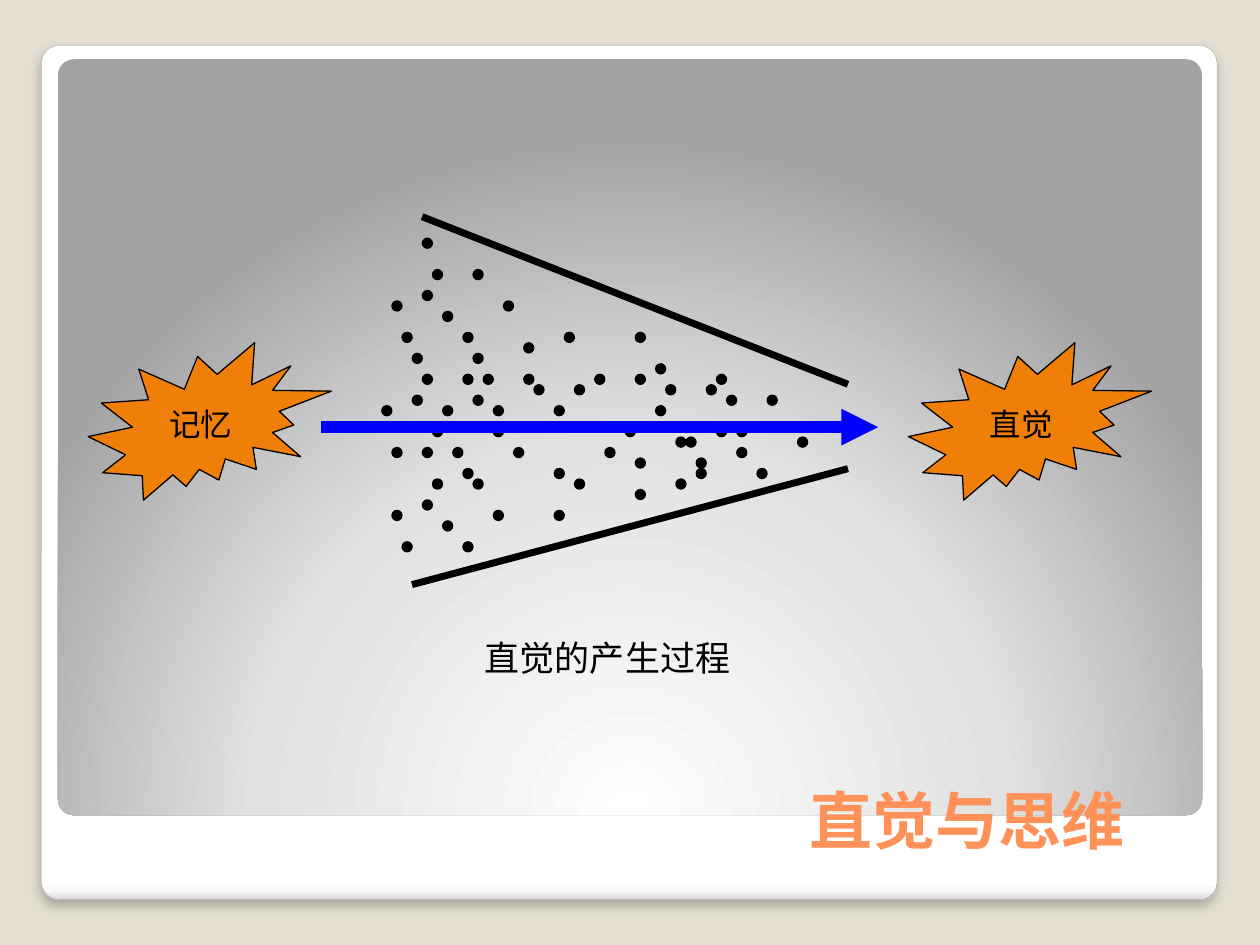
from dataclasses import dataclass

from pptx import Presentation
from pptx.dml.color import RGBColor
from pptx.enum.shapes import MSO_CONNECTOR as Link, MSO_SHAPE as Kind
from pptx.enum.text import MSO_ANCHOR as Anchor, PP_ALIGN as Align
from pptx.oxml import parse_xml
from pptx.oxml.ns import nsdecls, qn
from pptx.util import Inches, Pt

Box = tuple[float, float, float, float]
Stops = list[tuple[int, str]]

BLACK = "000000"
DOT, LEFT, TOP = 0.08, 3.03, 1.89
STEP_X, STEP_Y = 3.3 / 41, 2.41 / 29
# grid row -> grid columns that hold a dot
DOTS = {
    0: [4], 3: [5, 9], 5: [4], 6: [1, 12], 7: [6],
    9: [2, 8, 18, 25], 10: [14], 11: [3, 9], 12: [27],
    13: [4, 8, 10, 14, 21, 25, 33], 14: [15, 19, 28, 32],
    15: [3, 9, 34, 38], 16: [0, 6, 11, 17, 27],
    18: [5, 11, 24, 33, 35], 19: [29, 30, 41],
    20: [1, 4, 7, 13, 22, 35], 21: [25, 31], 22: [8, 17, 31, 37],
    23: [5, 9, 19, 29], 24: [25], 25: [4], 26: [1, 11, 17],
    27: [6], 29: [2, 8],
}


@dataclass
class Line:
    ends: Box
    color: str
    width: float
    arrow: bool = False


@dataclass
class Label:
    text: str
    size: int
    color: str = BLACK
    font: str = "Arial"
    bold: bool = False
    align: Align = Align.LEFT


WALLS = [
    Line((3.35, 1.72, 6.73, 3.05), BLACK, 4),
    Line((3.27, 4.64, 6.73, 3.72), BLACK, 4),
]
ARROW = Line((2.55, 3.39, 6.97, 3.39), "0000FF", 7, arrow=True)
BURSTS = {"记忆": 0.7, "直觉": 7.21}


def rgb(code: str) -> RGBColor:
    return RGBColor.from_string(code)


def place(box: Box) -> list[Inches]:
    return [Inches(v) for v in box]


def assign(item, values: dict) -> None:
    for name, value in values.items():
        setattr(item, name, value)


def add_form(shapes, kind: Kind, box: Box, fill: str,
             edge: str = BLACK, width: float = 0.75):
    form = shapes.add_shape(kind, *place(box))
    form.shadow.inherit = False
    form.fill.solid()
    form.fill.fore_color.rgb = rgb(fill)
    form.line.color.rgb = rgb(edge)
    form.line.width = Pt(width)
    return form


def add_line(shapes, line: Line) -> None:
    link = shapes.add_connector(Link.STRAIGHT, *place(line.ends))
    link.line.color.rgb = rgb(line.color)
    link.line.width = Pt(line.width)
    if line.arrow:
        link.line._get_or_add_ln().append(
            parse_xml(f'<a:tailEnd {nsdecls("a")} type="triangle"/>'))
    link._element.spPr.append(parse_xml(f'<a:effectLst {nsdecls("a")}/>'))


def write(form, label: Label, **frame) -> None:
    assign(form.text_frame, frame)
    para = form.text_frame.paragraphs[0]
    para.alignment = label.align
    run = para.add_run()
    run.text = label.text
    assign(run.font, {"size": Pt(label.size), "name": label.font,
                      "bold": label.bold})
    run.font.color.rgb = rgb(label.color)


def shade(form, stops: Stops, course: str) -> None:
    """Swap the plain fill for a gradient; course is its direction in XML."""
    marks = "".join(
        f'<a:gs pos="{at * 1000}"><a:srgbClr val="{code}"/></a:gs>'
        for at, code in stops)
    props = form._element.spPr
    props.replace(props.find(qn("a:solidFill")), parse_xml(
        f'<a:gradFill {nsdecls("a")} rotWithShape="1">'
        f"<a:gsLst>{marks}</a:gsLst>{course}</a:gradFill>"))


def add_frame(shapes) -> None:
    """Draw the white card with its shadow and the grey panel on it."""
    card = add_form(shapes, Kind.ROUNDED_RECTANGLE,
                    (0.33, 0.36, 9.33, 6.78), "FFFFFF", "A4A4A4", 0.16)
    shade(card, [(0, "FFFFFF"), (98, "FFFFFF"), (99, "F7F7F7"),
                 (100, "DADADA")], '<a:lin ang="5400000" scaled="0"/>')
    card._element.spPr.find(qn("a:effectLst")).append(parse_xml(
        f'<a:outerShdw {nsdecls("a")} blurRad="{Pt(6)}" dist="{Pt(4)}" '
        'dir="5400000" algn="t" rotWithShape="0"><a:srgbClr val="000000">'
        '<a:alpha val="25000"/></a:srgbClr></a:outerShdw>'))
    panel = add_form(shapes, Kind.ROUNDED_RECTANGLE,
                     (0.46, 0.47, 9.08, 6), "E1E1E1")
    panel.line.fill.background()
    shade(panel, [(0, "FFFFFF"), (55, "E1E1E1"), (100, "A2A2A2")],
          '<a:path path="circle"><a:fillToRect l="50000" t="175000" '
          'r="50000" b="-75000"/></a:path>')
    for form in (card, panel):
        form.adjustments[0] = 0.021


def add_funnel(shapes) -> None:
    for wall in WALLS:
        add_line(shapes, wall)
    for row, cols in DOTS.items():
        for col in cols:
            spot = (LEFT + col * STEP_X, TOP + row * STEP_Y, DOT, DOT)
            add_form(shapes, Kind.OVAL, spot, BLACK)
    add_line(shapes, ARROW)
    for text, left in BURSTS.items():
        burst = add_form(shapes, Kind.EXPLOSION2,
                         (left, 2.72, 1.93, 1.25), "F07F09")
        write(burst, Label(text, 18, align=Align.CENTER),
              word_wrap=False, vertical_anchor=Anchor.MIDDLE)


def main() -> None:
    deck = Presentation()
    assign(deck, {"slide_width": Inches(10), "slide_height": Inches(7.5)})
    slide = deck.slides.add_slide(deck.slide_layouts[6])
    slide.background.fill.solid()
    slide.background.fill.fore_color.rgb = rgb("E3DED1")
    shapes = slide.shapes
    add_frame(shapes)
    title = shapes.add_textbox(*place((6.33, 6.09, 2.89, 0.76)))
    write(title, Label("直觉与思维", 36, "FF9258", "DejaVu Sans", True),
          word_wrap=True, vertical_anchor=Anchor.BOTTOM)
    add_funnel(shapes.add_group_shape().shapes)
    note = shapes.add_textbox(*place((3.75, 5, 2.16, 0.44)))
    write(note, Label("直觉的产生过程", 20), word_wrap=False)
    deck.save("out.pptx")


if __name__ == "__main__":
    main()
